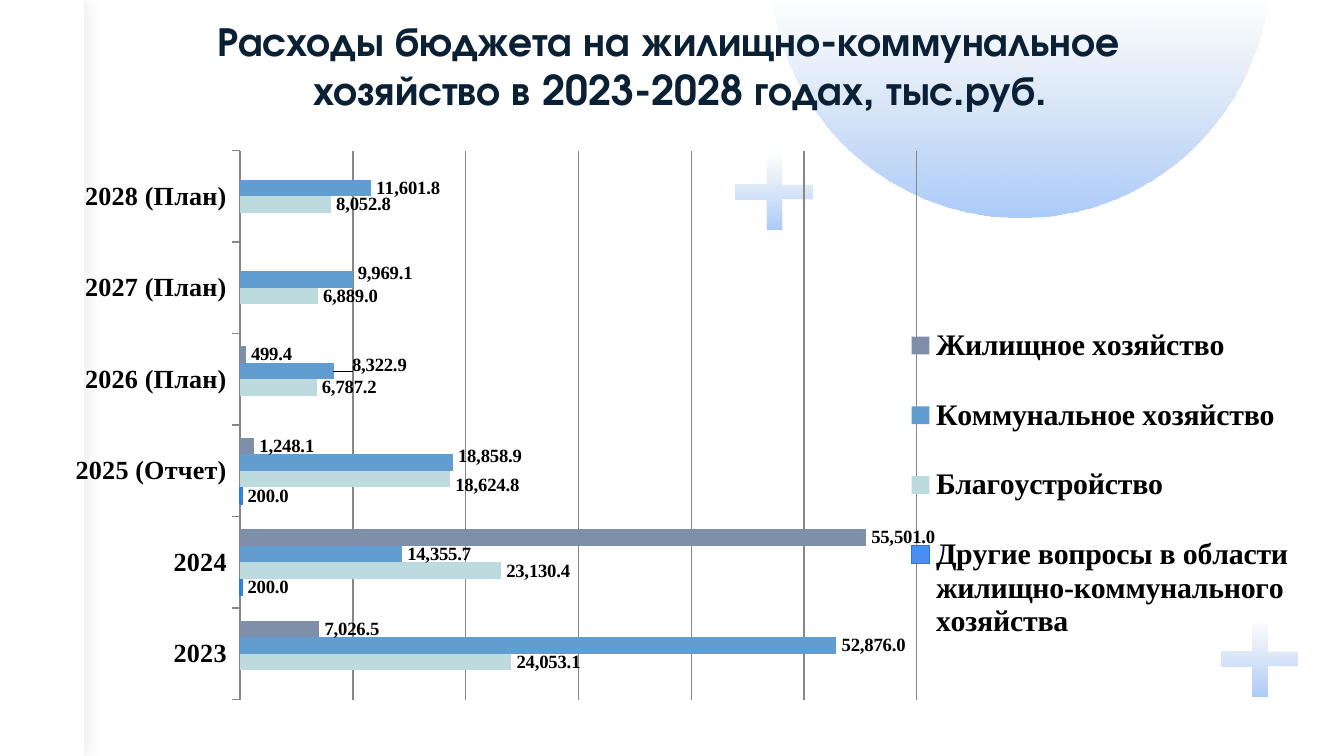
from dataclasses import dataclass
from math import asin, cos, pi, sin

from lxml.etree import SubElement
from pptx import Presentation
from pptx.chart.data import CategoryChartData
from pptx.dml.color import RGBColor as RGB
from pptx.enum.chart import (XL_CHART_TYPE as ChartType, XL_LABEL_POSITION as LabelPos,
                             XL_LEGEND_POSITION as LegendPos, XL_TICK_MARK as Tick)
from pptx.enum.shapes import MSO_SHAPE as Shape
from pptx.enum.text import MSO_ANCHOR as Anchor, PP_ALIGN as Align
from pptx.oxml.ns import qn
from pptx.util import Pt

PX = 914400 / 134.4


@dataclass(frozen=True)
class Theme:
    title_font: str = "TeX Gyre Adventor"
    chart_font: str = "Times New Roman"
    title: str = "0A2035"
    text: str = "000000"
    panel: str = "FFFFFF"
    fade_top: str = "B4CCE7"
    fade_bottom: str = "ACCBF9"
    grid: str = "878787"
    other_line: str = "247CD5"
    title_size: int = 22
    chart_size: int = 18
    legend_size: int = 16
    category_size: int = 14
    label_size: int = 10


THEME = Theme()
NUMBER_FORMAT = "#,##0.0"
TITLE = ("Расходы бюджета на жилищно-коммунальное \n"
         " хозяйство в 2023-2028 годах, тыс.руб.")
YEARS = ["2023", "2024", "2025 (Отчет)", "2026 (План)", "2027 (План)", "2028 (План)"]
OTHER = "Другие вопросы в области жилищно-коммунального хозяйства"
# name, colour, values, label shifts {year index: (x, y) as parts of the chart}
EXPENSES = [
    (OTHER, "4A8EF2", [None, 200, 200, None, None, None], {}),
    ("Благоустройство", "BDDADF", [24053.1, 23130.4, 18624.8, 6787.2, 6889, 8052.8],
     {2: (0.0, 0.01), 3: (-0.0, 0.0)}),
    ("Коммунальное хозяйство", "629DD1",
     [52876, 14355.7, 18858.9, 8322.9, 9969.1, 11601.8],
     {2: (0.0, -0.01), 3: (0.01, -0.01), 4: (0.0, -0.01)}),
    ("Жилищное хозяйство", "7F8FA9", [7026.5, 55501, 1248.1, 499.4, None, None], {}),
]


def px(*lengths):
    return [round(length * PX) for length in lengths]


def set_font(font, size, color=THEME.text, name=THEME.chart_font, bold=True):
    font.size, font.name, font.bold = Pt(size), name, bold
    font.color.rgb = RGB.from_string(color)


def fill_solid(part, color):
    part.fill.solid()
    part.fill.fore_color.rgb = RGB.from_string(color)


def fade_in(shape):
    """Fill from clear at the top to blue at the bottom."""
    shape.shadow.inherit = False
    shape.line.fill.background()
    shape.fill.gradient()
    shape.fill.gradient_angle = 270
    for stop, color in zip(shape.fill.gradient_stops, (THEME.fade_top, THEME.fade_bottom)):
        stop.color.rgb = RGB.from_string(color)
    first_color = shape._element.xpath(".//a:gs/a:srgbClr")[0]
    SubElement(first_color, qn("a:alpha"), val="0")


def add_disc(slide, center_x, center_y, radius):
    """Draw the part of a disc that lies below the slide's top edge."""
    start = asin(-center_y / radius)
    steps = 120
    angles = [start + (pi - 2 * start) * i / steps for i in range(steps + 1)]
    points = [px(center_x + radius * cos(a), center_y + radius * sin(a)) for a in angles]
    builder = slide.shapes.build_freeform(*points[0])
    builder.add_line_segments(points[1:])
    fade_in(builder.convert_to_shape())


def add_plus(slide, left, top, size):
    plus = slide.shapes.add_shape(Shape.CROSS, *px(left, top, size, size))
    plus.adjustments[0] = 0.4
    fade_in(plus)


def add_side_panel(slide, width, height):
    panel = slide.shapes.add_shape(Shape.RECTANGLE, *px(0, 0, width, height))
    fill_solid(panel, THEME.panel)
    panel.line.fill.background()
    panel.shadow.inherit = False
    effects = panel._element.spPr.find(qn("a:effectLst"))
    shadow = SubElement(effects, qn("a:outerShdw"), blurRad=str(Pt(10)), dist="0",
                        algn="ctr", rotWithShape="0")
    color = SubElement(shadow, qn("a:srgbClr"), val=THEME.text)
    SubElement(color, qn("a:alpha"), val="10000")


def add_title(slide):
    title = slide.shapes.title
    slide.shapes._spTree.append(title._element)
    title.left, title.top, title.width, title.height = px(5, 8, 1339, 113)
    frame = title.text_frame
    frame.text = TITLE
    frame.word_wrap = True
    frame.vertical_anchor = Anchor.MIDDLE
    for paragraph in frame.paragraphs:
        paragraph.alignment = Align.CENTER
        for run in paragraph.runs:
            set_font(run.font, THEME.title_size, THEME.title, THEME.title_font)


def set_layout(parent, index, **values):
    """Give a chart part a manual layout as its child at the index."""
    for old in parent.findall(qn("c:layout")):
        parent.remove(old)
    layout = SubElement(parent, qn("c:layout"))
    parent.insert(index, layout)
    manual = SubElement(layout, qn("c:manualLayout"))
    for tag, value in values.items():
        SubElement(manual, qn("c:" + tag), val=str(value))


def label_series(series, shifts):
    labels = series.data_labels
    labels.show_value = True
    labels.number_format, labels.number_format_is_linked = NUMBER_FORMAT, False
    labels.position = LabelPos.OUTSIDE_END
    set_font(labels.font, THEME.label_size)
    for year, (x, y) in shifts.items():
        label = series.points[year].data_label
        set_font(label.font, THEME.label_size)
        label.position = LabelPos.OUTSIDE_END
        element = series._element.xpath(f"c:dLbls/c:dLbl[c:idx/@val='{year}']")[0]
        set_layout(element, 1, x=x, y=y)
        number = SubElement(element, qn("c:numFmt"), formatCode=NUMBER_FORMAT,
                            sourceLinked="0")
        element.insert(2, number)


def format_axes(chart):
    years, amounts = chart.category_axis, chart.value_axis
    years.major_tick_mark = Tick.OUTSIDE
    years.has_major_gridlines = False
    set_font(years.tick_labels.font, THEME.category_size)
    amounts.visible = False
    amounts.minimum_scale, amounts.maximum_scale, amounts.major_unit = 0, 60000, 10000
    amounts.has_major_gridlines = True
    for line in (years.format.line, amounts.major_gridlines.format.line):
        line.color.rgb = RGB.from_string(THEME.grid)
        line.width = Pt(0.75)


def add_expense_chart(slide):
    data = CategoryChartData(number_format=NUMBER_FORMAT)
    data.categories = YEARS
    for name, _, values, _ in EXPENSES:
        data.add_series(name, values)
    chart = slide.shapes.add_chart(ChartType.BAR_CLUSTERED, *px(23, 126, 1277, 617), data).chart
    chart.has_title = False
    set_font(chart.font, THEME.chart_size, name=THEME.title_font, bold=False)
    format_axes(chart)

    plot = chart.plots[0]
    plot.gap_width, plot.overlap, plot.vary_by_categories = 150, 0, False
    for series, (name, color, _, shifts) in zip(plot.series, EXPENSES):
        fill_solid(series.format, color)
        series.invert_if_negative = False
        if name == OTHER:
            series.format.line.color.rgb = RGB.from_string(THEME.other_line)
            series.format.line.width = Pt(0.75)
        label_series(series, shifts)

    chart.has_legend = True
    legend = chart.legend
    legend.position, legend.include_in_layout = LegendPos.RIGHT, False
    set_font(legend.font, THEME.legend_size)
    set_layout(legend._element, 1, xMode="edge", yMode="edge", x=0.69, y=0.27, w=0.31, h=0.62)
    set_layout(chart._chartSpace.chart.plotArea, 0, layoutTarget="inner", xMode="edge",
               yMode="edge", x=0.17, y=0.04, w=0.53, h=0.89)


def main():
    presentation = Presentation()
    presentation.slide_width, presentation.slide_height = px(1344, 756)
    slide = presentation.slides.add_slide(presentation.slide_layouts[5])
    add_disc(slide, 1020, -31, 249)
    add_side_panel(slide, 84, 756)
    for left, top in ((736, 154), (1222, 621)):
        add_plus(slide, left, top, 76)
    add_title(slide)
    add_expense_chart(slide)
    presentation.save("out.pptx")


if __name__ == "__main__":
    main()
